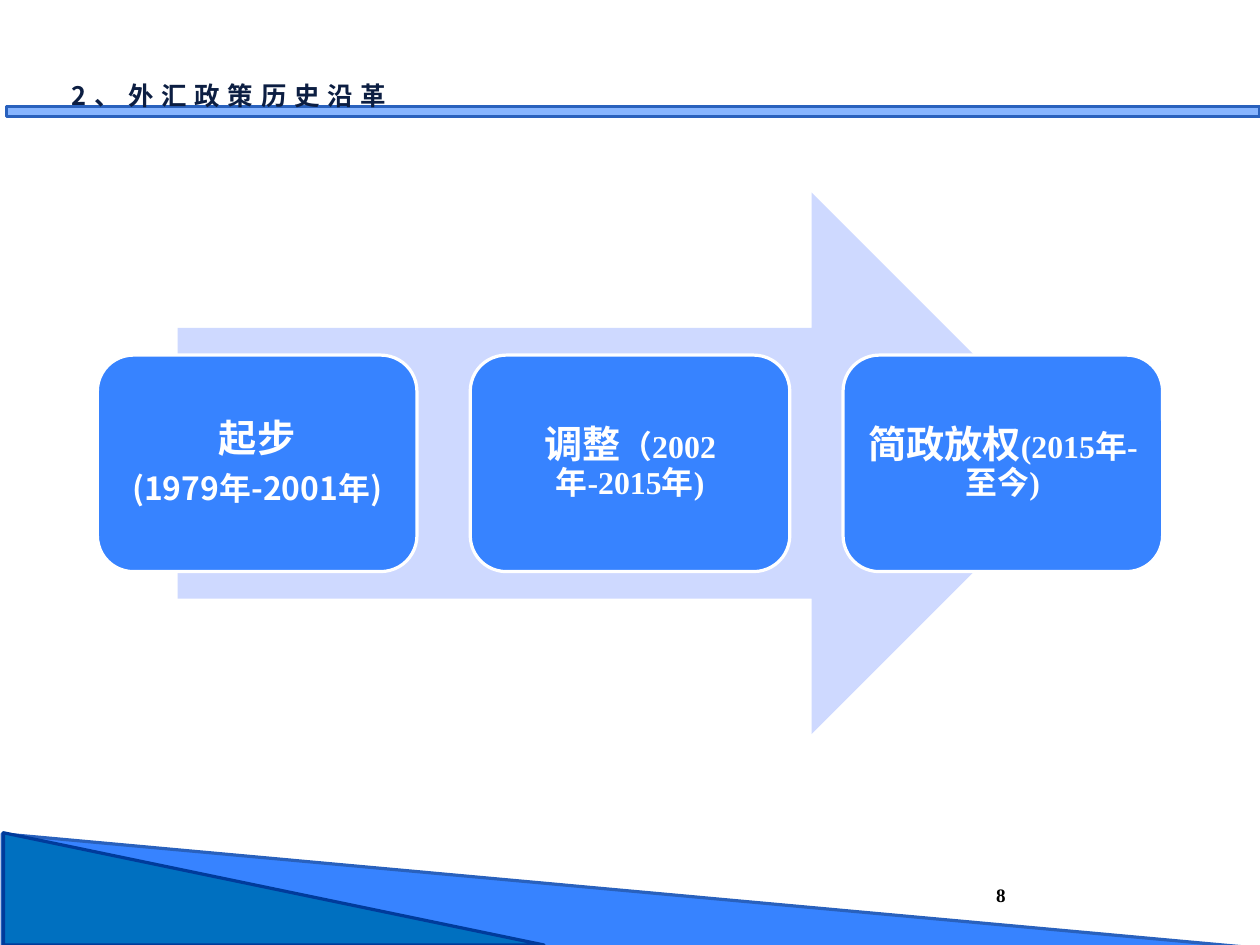
from pptx import Presentation
from pptx.dml.color import RGBColor
from pptx.enum import shapes, text
from pptx.oxml.ns import qn
from pptx.util import Inches, Pt
from lxml import etree

SANS, SERIF = "Noto Sans CJK SC", "Times New Roman"
SHAPE = shapes.MSO_SHAPE


def add_shape(kind, box, fill, line=None):
    sp = s.shapes.add_shape(kind, *[Inches(v) for v in box])
    sp.shadow.inherit = False
    sp.fill.solid()
    sp.fill.fore_color.rgb = RGBColor.from_string(fill)
    if line:
        sp.line.color.rgb = RGBColor.from_string(line)
        sp.line.width = Pt(2)
    else:
        sp.line.fill.background()
    return sp


def add_run(p, words, size, font, color):
    r = p.add_run()
    r.text = words
    r.font.size, r.font.bold, r.font.name = Pt(size), True, font
    r.font.color.rgb = RGBColor.from_string(color)
    etree.SubElement(r._r.get_or_add_rPr(), qn("a:ea"), typeface=SANS)
    return r


prs = Presentation()
prs.slide_width, prs.slide_height = Inches(11), Inches(8.25)
s = prs.slides.add_slide(prs.slide_layouts[6])

# Corner triangles and header bar
add_shape(SHAPE.RIGHT_TRIANGLE, (0.02, 7.28, 10.98, 1), "3783FF", "2961BD")
add_shape(SHAPE.RIGHT_TRIANGLE, (0.03, 7.27, 4.72, 0.98), "0070C0", "003B9B")
add_shape(SHAPE.RECTANGLE, (0.06, 0.93, 10.94, 0.09), "87B5FF", "2961BD")

# Title
tf = s.shapes.add_textbox(Inches(0.53), Inches(0.65), Inches(3.06), Inches(0.37)).text_frame
tf.word_wrap = False
r = add_run(tf.paragraphs[0], "2、外汇政策历史沿革", 16, SANS, "0C1E42")
r._r.get_or_add_rPr().set("spc", "500")

# Arrow behind the stages
add_shape(SHAPE.RIGHT_ARROW, (1.55, 1.68, 7.9, 4.73), "CED9FF")

# Stages: each is a list of paragraphs, each paragraph a list of runs
stages = [
    [[("起步", 24, SERIF)], [("(1979年-2001年)", 20, SANS)]],
    [[("调整", 24, SERIF), ("（2002年-2015年)", 20, SERIF)]],
    [[("简政放权", 24, SERIF), ("(2015年-至今)", 20, SERIF)]],
]
for i, paragraphs in enumerate(stages):
    sp = add_shape(SHAPE.ROUNDED_RECTANGLE, (0.85 + 3.255 * i, 3.1, 2.79, 1.89), "3783FF", "FFFFFF")
    tf = sp.text_frame
    tf.word_wrap = True
    tf.vertical_anchor = text.MSO_ANCHOR.MIDDLE
    tf.margin_left = tf.margin_right = tf.margin_top = tf.margin_bottom = Inches(0.1)
    for j, runs in enumerate(paragraphs):
        p = tf.add_paragraph() if j else tf.paragraphs[0]
        p.alignment = text.PP_ALIGN.CENTER
        p.line_spacing = 0.9
        p.space_after = Pt(8)
        for words, size, font in runs:
            add_run(p, words, size, font, "FFFFFF")

# Page number
tf = s.shapes.add_textbox(Inches(8.33), Inches(7.49), Inches(0.45), Inches(0.42)).text_frame
tf.word_wrap = False
tf.vertical_anchor = text.MSO_ANCHOR.BOTTOM
tf.margin_left = tf.margin_right = tf.margin_top = tf.margin_bottom = 0
p = tf.paragraphs[0]
p.alignment = text.PP_ALIGN.RIGHT
add_run(p, "8", 12, SERIF, "000000")

prs.save("out.pptx")
